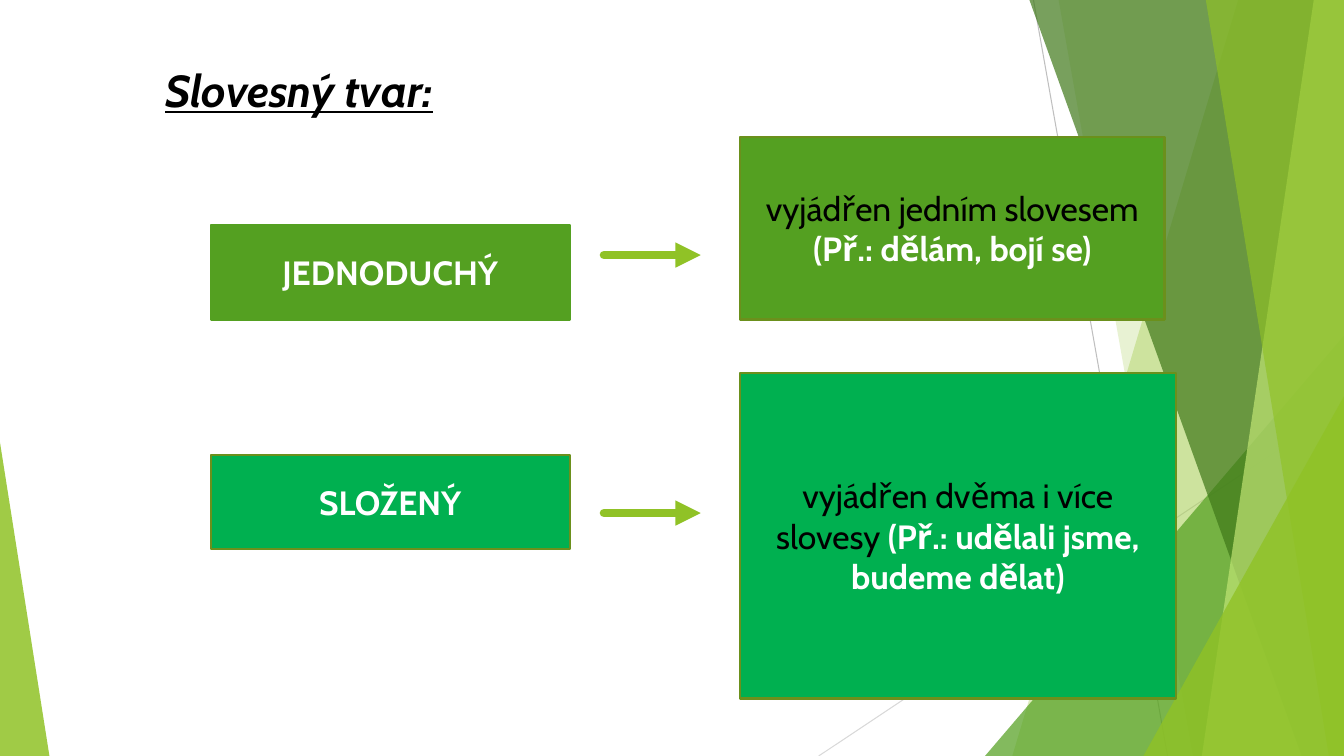
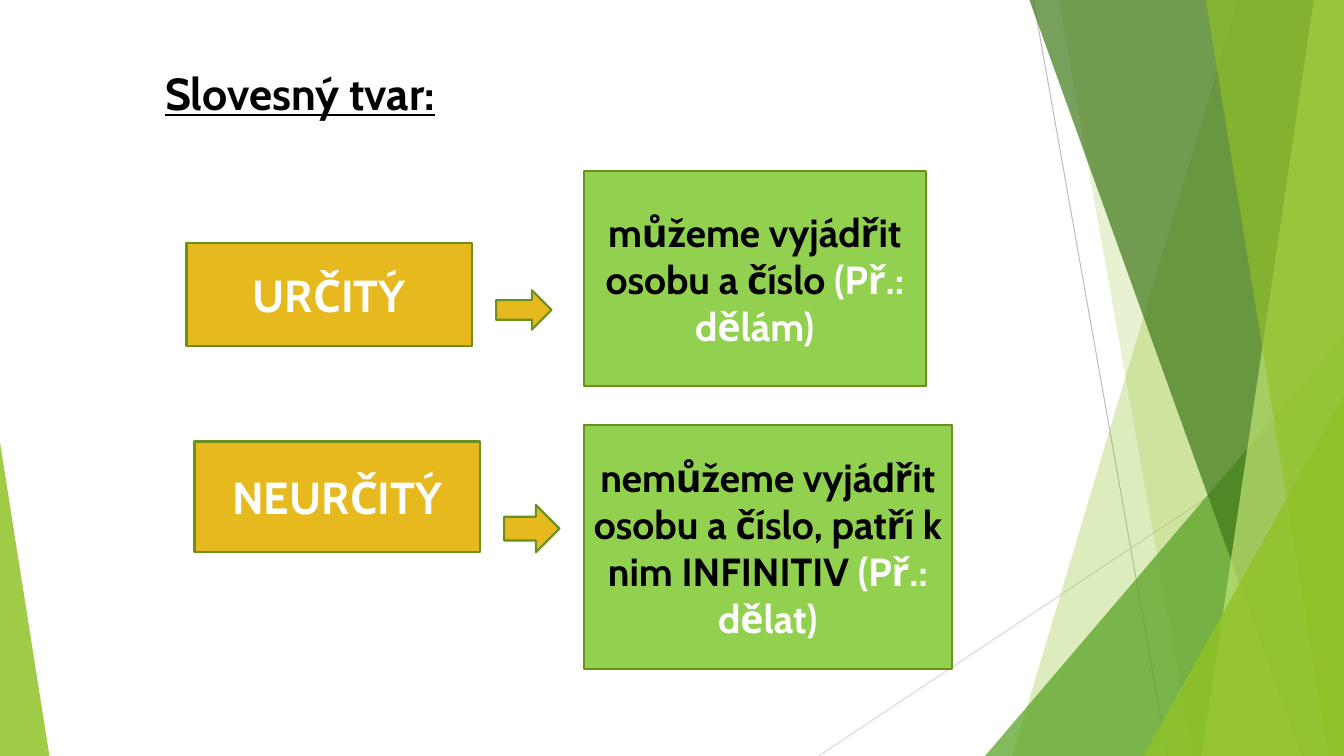
from lxml.etree import SubElement
from pptx import Presentation
from pptx.dml.color import RGBColor
from pptx.enum.shapes import MSO_CONNECTOR as Connector, MSO_SHAPE as Shape
from pptx.enum.text import MSO_ANCHOR as Anchor, PP_ALIGN as Align
from pptx.oxml.ns import qn
from pptx.util import Inches, Pt

WIDTH, HEIGHT = 13.33, 7.5
FONT = "Cabin"

BLACK = RGBColor(0x00, 0x00, 0x00)
WHITE = RGBColor(0xFF, 0xFF, 0xFF)
GRAY = RGBColor(0xBF, 0xBF, 0xBF)
LIGHT_GRAY = RGBColor(0xD9, 0xD9, 0xD9)
LIME = RGBColor(0x90, 0xC2, 0x26)
PALE_LIME = RGBColor(0xC0, 0xE4, 0x74)
GREEN = RGBColor(0x54, 0xA0, 0x21)
DARK_GREEN = RGBColor(0x3F, 0x78, 0x19)
EMERALD = RGBColor(0x00, 0xB0, 0x50)
LIGHT_GREEN = RGBColor(0x92, 0xD0, 0x50)
OLIVE = RGBColor(0x6B, 0x90, 0x1C)
GOLD = RGBColor(0xE6, 0xB9, 0x1E)


# Shapes and lines
def paint(shape, fill, line=None, opacity=100):
    shape.shadow.inherit = False
    shape.fill.solid()
    shape.fill.fore_color.rgb = fill
    if opacity < 100:
        color = shape.element.spPr.find(f"{qn('a:solidFill')}/{qn('a:srgbClr')}")
        SubElement(color, qn("a:alpha"), val=str(opacity * 1000))
    if line is None:
        shape.line.fill.background()
    else:
        shape.line.color.rgb = line
        shape.line.width = Pt(1.5)


def add_preset(slide, kind, box, fill, line=None, opacity=100):
    shape = slide.shapes.add_shape(kind, *map(Inches, box))
    paint(shape, fill, line, opacity)
    return shape


def add_line(slide, start, end, color, width):
    connector = slide.shapes.add_connector(
        Connector.STRAIGHT, *map(Inches, (*start, *end)))
    connector.line.color.rgb = color
    connector.line.width = Pt(width)
    SubElement(connector.element.spPr, qn("a:effectLst"))
    return connector


def add_line_arrow(slide, y):
    connector = add_line(slide, (5.99, y), (6.95, y), LIME, 6)
    outline = connector.line._get_or_add_ln()
    outline.set("cap", "rnd")
    SubElement(outline, qn("a:tailEnd"), type="triangle")


# Decoration
def add_band(slide, top_x, bottom_x, color, opacity):
    """Fill from a slanted left side to the right slide edge."""
    builder = slide.shapes.build_freeform(Inches(top_x), 0)
    builder.add_line_segments([
        (Inches(WIDTH), 0),
        (Inches(WIDTH), Inches(HEIGHT)),
        (Inches(bottom_x), Inches(HEIGHT)),
    ])
    paint(builder.convert_to_shape(), color, opacity=opacity)


def add_corner(slide, left, top, width, apex, color, opacity):
    """Triangle standing on the bottom slide edge."""
    box = (left, top, width, HEIGHT - top)
    triangle = add_preset(slide, Shape.ISOSCELES_TRIANGLE, box, color, opacity=opacity)
    triangle.adjustments[0] = apex


def add_decoration(slide):
    add_line(slide, (10.25, 0), (11.58, HEIGHT), GRAY, 0.75)
    add_line(slide, (WIDTH, 4.03), (8.12, HEIGHT), LIGHT_GRAY, 0.75)
    add_band(slide, 12.28, 10.04, LIME, 30)
    add_band(slide, 10.5, 11.83, LIME, 20)
    add_corner(slide, 9.77, 3.33, 3.56, 1, GREEN, 72)
    add_band(slide, 10.21, 12.91, DARK_GREEN, 70)
    add_band(slide, 13.03, 11.92, PALE_LIME, 70)
    add_band(slide, 11.96, 13.18, LIME, 65)
    add_corner(slide, 11.34, 3.93, 1.99, 1, LIME, 80)
    add_corner(slide, 0, 4.39, 0.49, 0, LIME, 85)


# Text
def add_title(slide, top, italic):
    frame = slide.shapes.add_textbox(*map(Inches, (1.54, top, 8, 0.65))).text_frame
    frame.word_wrap = True
    paragraph = frame.paragraphs[0]
    paragraph.text = "Slovesný tvar:"
    font = paragraph.font
    font.name, font.size, font.color.rgb = FONT, Pt(32), BLACK
    font.bold, font.italic, font.underline = True, italic, True


def add_box(slide, box, fill, size, runs, line=OLIVE):
    """Centred text box; runs are (text, color, bold)."""
    frame = add_preset(slide, Shape.RECTANGLE, box, fill, line).text_frame
    frame.word_wrap = True
    frame.vertical_anchor = Anchor.MIDDLE
    paragraph = frame.paragraphs[0]
    paragraph.alignment = Align.CENTER
    paragraph.font.name, paragraph.font.size = FONT, Pt(size)
    for text, color, bold in runs:
        run = paragraph.add_run()
        run.text = text
        run.font.color.rgb, run.font.bold = color, bold


def add_label(slide, box, fill, size, text, line=OLIVE):
    add_box(slide, box, fill, size, [(text, WHITE, True)], line)


def add_meaning(slide, box, fill, size, meaning, example, bold):
    add_box(slide, box, fill, size,
            [(meaning + " ", BLACK, bold), (example, WHITE, True)])


# Slides
def new_slide(presentation, title_top, italic=False):
    slide = presentation.slides.add_slide(presentation.slide_layouts[6])
    add_decoration(slide)
    add_title(slide, title_top, italic)
    return slide


def add_simple_compound(presentation):
    slide = new_slide(presentation, 0.57, italic=True)
    add_label(slide, (2.09, 2.23, 3.56, 0.94), GREEN, 24, "JEDNODUCHÝ", line=GREEN)
    add_label(slide, (2.09, 4.51, 3.56, 0.94), EMERALD, 24, "SLOŽENÝ")
    add_meaning(slide, (7.34, 1.36, 4.21, 1.81), GREEN, 24,
                "vyjádřen jedním slovesem", "(Př.: dělám, bojí se)", False)
    add_meaning(slide, (7.34, 3.7, 4.32, 3.23), EMERALD, 24,
                "vyjádřen dvěma i více slovesy",
                "(Př.: udělali jsme, budeme dělat)", False)
    for y in (2.53, 5.09):
        add_line_arrow(slide, y)


def add_finite_infinite(presentation):
    slide = new_slide(presentation, 0.6)
    add_label(slide, (1.85, 2.41, 2.83, 1.02), GOLD, 32, "URČITÝ")
    add_label(slide, (1.93, 4.38, 2.83, 1.1), GOLD, 32, "NEURČITÝ")
    add_meaning(slide, (5.79, 1.7, 3.39, 2.13), LIGHT_GREEN, 28,
                "můžeme vyjádřit osobu a číslo", "(Př.: dělám)", True)
    add_meaning(slide, (5.79, 4.22, 3.65, 2.42), LIGHT_GREEN, 28,
                "nemůžeme vyjádřit osobu a číslo, patří k nim INFINITIV",
                "(Př.: dělat)", True)
    for box in ((4.92, 2.88, 0.55, 0.39), (5, 5.01, 0.55, 0.47)):
        add_preset(slide, Shape.RIGHT_ARROW, box, GOLD, OLIVE)


def main():
    presentation = Presentation()
    presentation.slide_width = Inches(WIDTH)
    presentation.slide_height = Inches(HEIGHT)
    add_simple_compound(presentation)
    add_finite_infinite(presentation)
    presentation.save("out.pptx")


if __name__ == "__main__":
    main()
